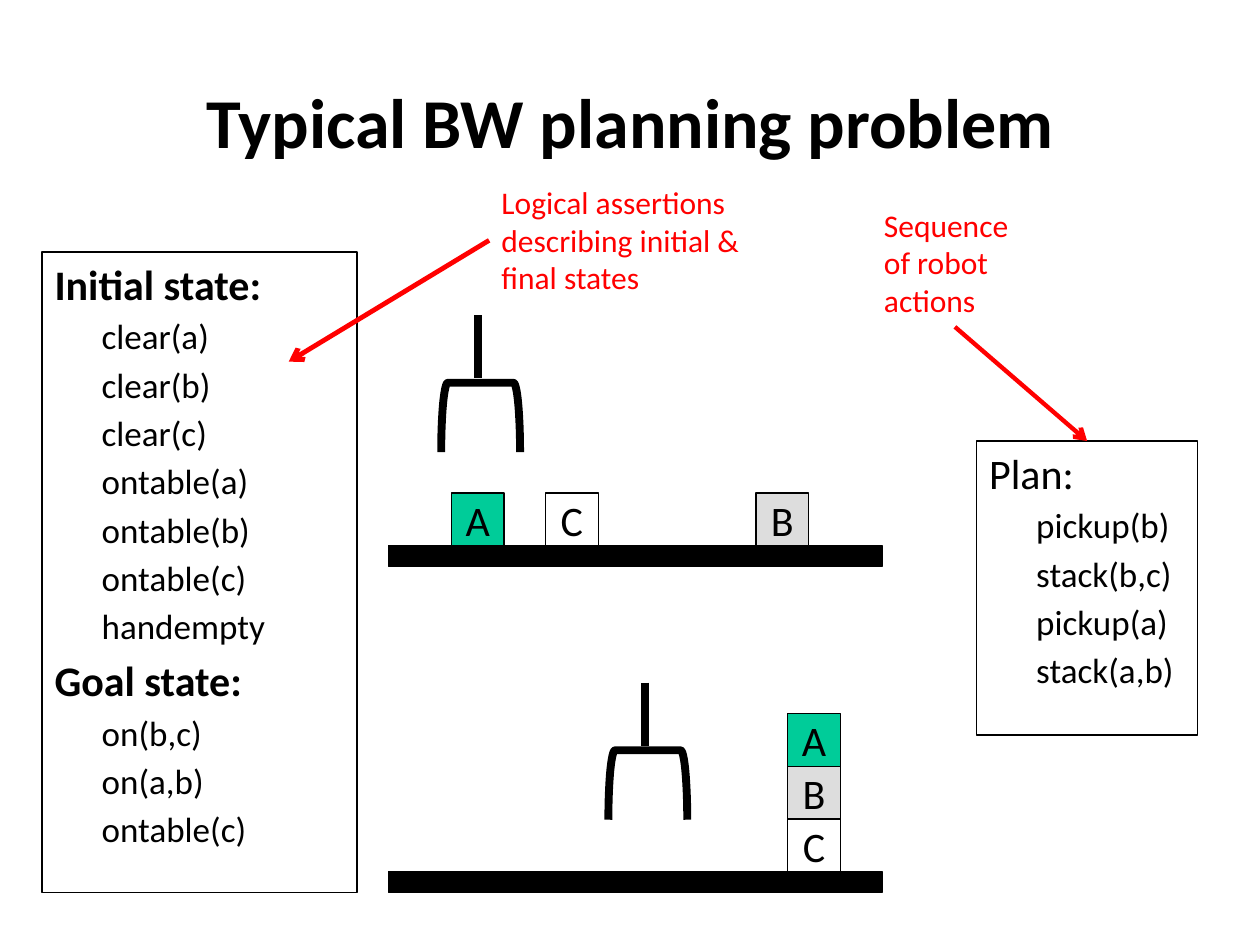
import pptx
import pptx.dml.color
import pptx.enum.shapes
import pptx.enum.text
import pptx.oxml
import pptx.oxml.ns
import pptx.util

Cm = pptx.util.Cm
Pt = pptx.util.Pt
SHAPE = pptx.enum.shapes.MSO_SHAPE
ALIGN = pptx.enum.text.PP_ALIGN
ANCHOR = pptx.enum.text.MSO_ANCHOR

# Content: lists of (heading, bold, items)
TITLE = "Typical BW planning problem"
STATES = [
    ("Initial state:", True, ["clear(a)", "clear(b)", "clear(c)", "ontable(a)",
                              "ontable(b)", "ontable(c)", "handempty"]),
    ("Goal state:", True, ["on(b,c)", "on(a,b)", "ontable(c)"]),
]
PLAN = [("Plan:", False, ["pickup(b)", "stack(b,c)", "pickup(a)", "stack(a,b)"])]
ASSERTIONS_NOTE = ["Logical assertions", "describing initial & ", "final states"]
SEQUENCE_NOTE = ["Sequence of robot actions"]

# Scenes: table top, hand (stem x, stem top), blocks (name, left, level), in cm
SCENES = [
    {"table": 11.0, "hand": (9.63, 6.35),
     "blocks": [("A", 9.1, 1), ("B", 15.24, 1), ("C", 11.0, 1)]},
    {"table": 17.57, "hand": (13.0, 13.76),
     "blocks": [("A", 15.88, 3), ("B", 15.88, 2), ("C", 15.88, 1)]},
]
BLOCK_FILLS = {"A": "00CC99", "B": "DDDDDD", "C": None}
BLOCK = 1.06
TABLE_LEFT, TABLE_WIDTH, TABLE_HEIGHT = 7.83, 9.95, 0.42
STEM = 1.27
GRIP_DEPTH, GRIP_SPAN = 1.4, 1.59
BLACK, RED = "000000", "FF0000"


def color(value):
    return pptx.dml.color.RGBColor.from_string(value)


def add_span(para, text, size, ink=BLACK, bold=False):
    span = para.add_run()
    span.text = text
    span.font.name = "Calibri"
    span.font.size = Pt(size)
    span.font.bold = bold
    span.font.color.rgb = color(ink)


def add_figure(shapes, kind, left, top, width, height, fill=None, line_width=0.75):
    figure = shapes.add_shape(kind, Cm(left), Cm(top), Cm(width), Cm(height))
    figure.shadow.inherit = False
    if fill:
        figure.fill.solid()
        figure.fill.fore_color.rgb = color(fill)
    else:
        figure.fill.background()
    figure.line.color.rgb = color(BLACK)
    figure.line.width = Pt(line_width)
    return figure


def add_line(shapes, start, end, ink, width, arrow=False):
    line = shapes.add_connector(pptx.enum.shapes.MSO_CONNECTOR.STRAIGHT,
                                *(Cm(value) for value in start + end))
    line.line.color.rgb = color(ink)
    line.line.width = Pt(width)
    if arrow:
        head = pptx.oxml.parse_xml(
            "<a:tailEnd %s type='arrow'/>" % pptx.oxml.ns.nsdecls("a"))
        line.line._get_or_add_ln().append(head)
    effects = "<a:effectLst %s/>" % pptx.oxml.ns.nsdecls("a")
    line._element.spPr.append(pptx.oxml.parse_xml(effects))
    return line


def add_text_box(left, top, width, height):
    box = page.shapes.add_textbox(Cm(left), Cm(top), Cm(width), Cm(height))
    box.text_frame.word_wrap = True
    return box


def add_note(lines, left, top, width, height):
    box = add_text_box(left, top, width, height)
    para = box.text_frame.paragraphs[0]
    for number, text in enumerate(lines):
        if number:
            para.add_line_break()
        add_span(para, text, 18, RED)
    return box


def add_outline(sections, left, top, width, height):
    box = add_figure(page.shapes, SHAPE.RECTANGLE, left, top, width, height)
    frame = box.text_frame
    frame.word_wrap = True
    frame.vertical_anchor = ANCHOR.TOP
    rows = []
    for heading, bold, items in sections:
        rows.append((heading, 0, 24, bold))
        rows.extend((item, 1, 20, False) for item in items)
    for number, (text, level, size, bold) in enumerate(rows):
        para = frame.add_paragraph() if number else frame.paragraphs[0]
        para.level = level
        para.alignment = ALIGN.LEFT
        para.space_before = Pt(size * 0.18)
        properties = para._p.get_or_add_pPr()
        properties.set("marL", str(Cm((0.64, 1.59)[level])))
        properties.set("indent", str(Cm(-0.64)))
        add_span(para, text, size, bold=bold)
    return box


def add_scene(scene):
    shapes = page.shapes.add_group_shape().shapes
    add_figure(shapes, SHAPE.RECTANGLE, TABLE_LEFT, scene["table"],
               TABLE_WIDTH, TABLE_HEIGHT, BLACK)
    for name, left, level in scene["blocks"]:
        block = add_figure(shapes, SHAPE.RECTANGLE, left,
                           scene["table"] - level * BLOCK, BLOCK, BLOCK,
                           BLOCK_FILLS[name])
        block.text_frame.word_wrap = False
        block.text_frame.vertical_anchor = ANCHOR.MIDDLE
        para = block.text_frame.paragraphs[0]
        para.alignment = ALIGN.CENTER
        add_span(para, name, 24)
    # Robot hand: a bracket turned to open downwards, hung on a stem
    x, y = scene["hand"]
    center_x, center_y = x + 0.06, y + STEM + GRIP_SPAN / 2
    grip = add_figure(shapes, SHAPE.RIGHT_BRACKET, center_x - GRIP_DEPTH / 2,
                      center_y - GRIP_SPAN / 2, GRIP_DEPTH, GRIP_SPAN, line_width=4.5)
    grip.adjustments[0] = 0.095
    grip.rotation = 270
    add_line(shapes, (x, y), (x, y + STEM), BLACK, 4.5)


deck = pptx.Presentation()
deck.slide_width, deck.slide_height = Cm(25.4), Cm(19.05)
page = deck.slides.add_slide(deck.slide_layouts[6])

# Title
title = add_text_box(1.9, 0.85, 21.6, 3.17)
title.text_frame.vertical_anchor = ANCHOR.MIDDLE
title.text_frame.paragraphs[0].alignment = ALIGN.CENTER
add_span(title.text_frame.paragraphs[0], TITLE, 40, bold=True)

# States, block scenes and plan
add_outline(STATES, 0.85, 5.08, 6.35, 12.91)
for scene in SCENES:
    add_scene(scene)
plan_box = add_outline(PLAN, 19.69, 8.89, 4.45, 5.93)

# Red notes with their arrows
assertions = add_note(ASSERTIONS_NOTE, 9.86, 3.56, 5.51, 2.57)
sequence = add_note(SEQUENCE_NOTE, 17.57, 4.02, 3.36, 2.57)
states_arrow = add_line(page.shapes, (9.86, 4.85), (5.82, 7.29), RED, 2.75, arrow=True)
states_arrow.begin_connect(assertions, 1)
plan_arrow = add_line(page.shapes, (19.25, 6.58), (21.9, 8.89), RED, 2.5, arrow=True)
plan_arrow.begin_connect(sequence, 2)
plan_arrow.end_connect(plan_box, 0)

deck.save("out.pptx")
